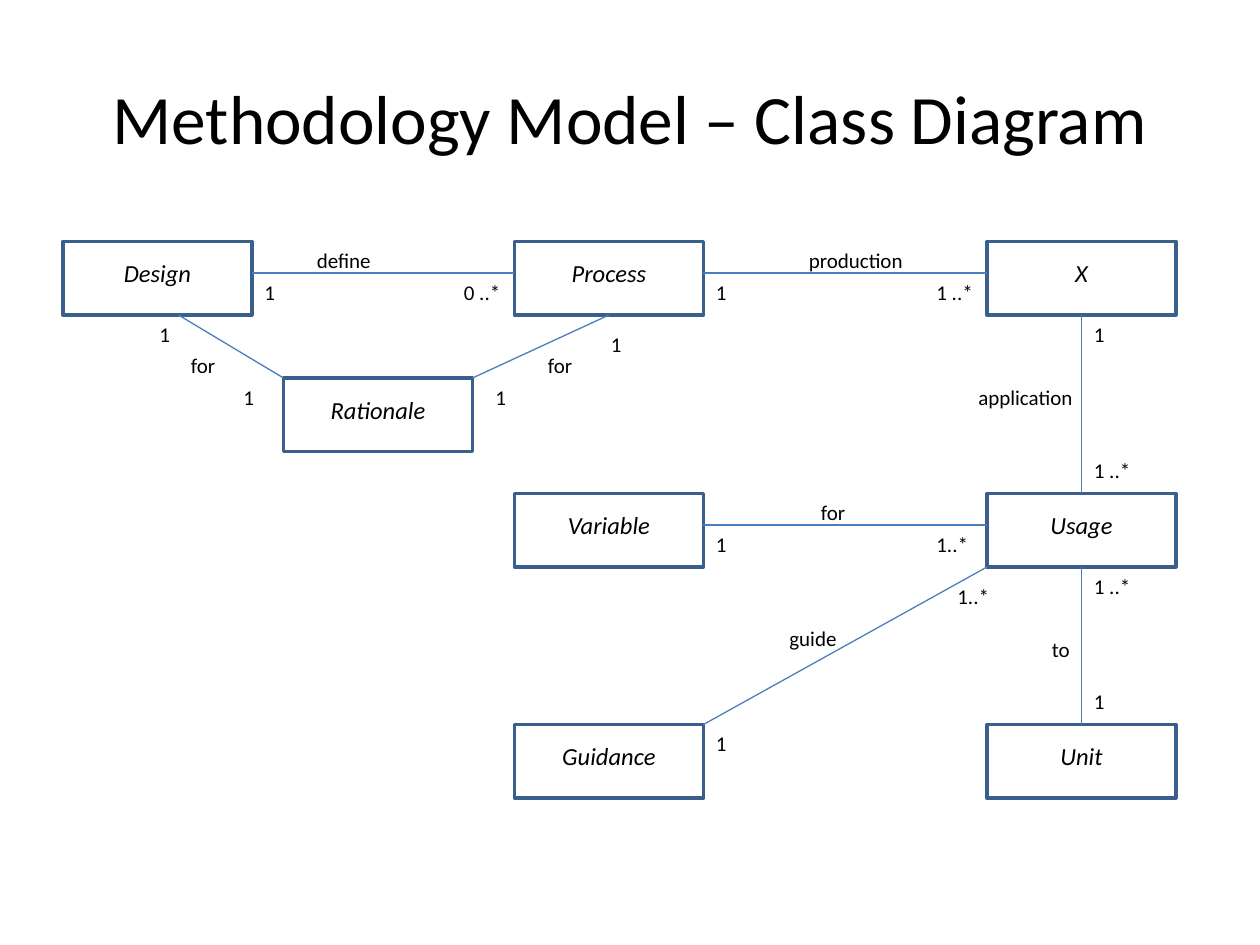
from dataclasses import dataclass

from lxml import etree
from pptx import Presentation
from pptx.dml.color import RGBColor
from pptx.enum.shapes import MSO_CONNECTOR, MSO_SHAPE
from pptx.enum.text import MSO_ANCHOR, PP_ALIGN
from pptx.oxml.ns import qn
from pptx.util import Pt

RECTANGLE = MSO_SHAPE.RECTANGLE
STRAIGHT = MSO_CONNECTOR.STRAIGHT
TOP, MIDDLE = MSO_ANCHOR.TOP, MSO_ANCHOR.MIDDLE
LEFT, CENTER = PP_ALIGN.LEFT, PP_ALIGN.CENTER


@dataclass(frozen=True)
class Theme:
    font: str = "Calibri"
    ink: RGBColor = RGBColor(0x00, 0x00, 0x00)
    border: RGBColor = RGBColor(0x3A, 0x5F, 0x8C)
    link: RGBColor = RGBColor(0x4B, 0x7E, 0xBC)
    title_size: float = 39.6
    class_size: float = 14
    label_size: float = 12
    border_width: float = 2
    link_width: float = 0.75


THEME = Theme()

# Class boxes: all one size, placed relative to the diagram
BOX_W, BOX_H = 108, 42
MID_X, MID_Y = BOX_W / 2, BOX_H / 2
LINK_Y = 18  # side links leave a box here
SITES = {(MID_X, 0): 0, (0, MID_Y): 1, (MID_X, BOX_H): 2, (BOX_W, MID_Y): 3}
COLUMNS = (0, 258, 528)
ROWS = (0, 144, 276)
CLASSES = {
    "Design": (COLUMNS[0], ROWS[0]),
    "Process": (COLUMNS[1], ROWS[0]),
    "X": (COLUMNS[2], ROWS[0]),
    "Rationale": (126, 78),
    "Variable": (COLUMNS[1], ROWS[1]),
    "Usage": (COLUMNS[2], ROWS[1]),
    "Guidance": (COLUMNS[1], ROWS[2]),
    "Unit": (COLUMNS[2], ROWS[2]),
}

# Associations: two ends (class, point on its box), then labels (text, x, y)
ASSOCIATIONS = [
    (("Process", (0, LINK_Y)), ("Design", (BOX_W, LINK_Y)),
     [("define", 138, 0), ("1", 108, 18), ("0 ..*", 222, 18)]),
    (("Process", (BOX_W, LINK_Y)), ("X", (0, LINK_Y)),
     [("production", 408, 0), ("1", 366, 18), ("1 ..*", 492, 18)]),
    (("Usage", (0, LINK_Y)), ("Variable", (BOX_W, LINK_Y)),
     [("for", 426, 144), ("1", 366, 162), ("1..*", 492, 162)]),
    (("Usage", (MID_X, 0)), ("X", (MID_X, BOX_H)),
     [("application", 516, 78), ("1", 582, 42), ("1 ..*", 582, 120)]),
    (("Unit", (MID_X, 0)), ("Usage", (MID_X, BOX_H)),
     [("to", 558, 222), ("1 ..*", 582, 186), ("1", 582, 252)]),
    (("Guidance", (BOX_W, 0)), ("Usage", (0, BOX_H)),
     [("guide", 408, 216), ("1", 366, 276), ("1..*", 504, 192)]),
    (("Rationale", (0, 0)), ("Design", (66, BOX_H)),
     [("for", 66, 60), ("1", 48, 42), ("1", 96, 78)]),
    (("Rationale", (BOX_W, 0)), ("Process", (MID_X, BOX_H)),
     [("for", 270, 60), ("1", 306, 48), ("1", 240, 78)]),
]
LABEL_W, LABEL_H = 36, 21.6
WIDE_LABELS = {"define": 48, "production": 90, "application": 72, "guide": 48}


def write(shape, text, size, align=LEFT, anchor=TOP, italic=False):
    frame = shape.text_frame
    frame.word_wrap = True
    frame.vertical_anchor = anchor
    paragraph = frame.paragraphs[0]
    paragraph.alignment = align
    run = paragraph.add_run()
    run.text = text
    run.font.name = THEME.font
    run.font.size = Pt(size)
    run.font.italic = italic
    run.font.color.rgb = THEME.ink


def add_text(slide, left, top, width, height, text, size, **style):
    box = slide.shapes.add_textbox(Pt(left), Pt(top), Pt(width), Pt(height))
    write(box, text, size, **style)


def add_class(slide, left, top, name):
    box = slide.shapes.add_shape(RECTANGLE, Pt(left), Pt(top), Pt(BOX_W), Pt(BOX_H))
    box.shadow.inherit = False
    box.fill.background()
    box.line.color.rgb = THEME.border
    box.line.width = Pt(THEME.border_width)
    box.text_frame.margin_top = Pt(9.6)
    write(box, name, THEME.class_size, align=CENTER, italic=True)
    return box


def add_association(slide, left, top, boxes, begin, end):
    corners = []
    for name, (dx, dy) in (begin, end):
        x, y = CLASSES[name]
        corners += [Pt(left + x + dx), Pt(top + y + dy)]
    link = slide.shapes.add_connector(STRAIGHT, *corners)
    link.line.color.rgb = THEME.link
    link.line.width = Pt(THEME.link_width)
    etree.SubElement(link._element.spPr, qn("a:effectLst"))
    for connect, (name, point) in ((link.begin_connect, begin), (link.end_connect, end)):
        if point in SITES:
            connect(boxes[name], SITES[point])


def add_diagram(slide, left, top):
    # Classes
    boxes = {name: add_class(slide, left + x, top + y, name)
             for name, (x, y) in CLASSES.items()}
    # Associations with their names and multiplicities
    for begin, end, labels in ASSOCIATIONS:
        add_association(slide, left, top, boxes, begin, end)
        for text, x, y in labels:
            add_text(slide, left + x, top + y, WIDE_LABELS.get(text, LABEL_W), LABEL_H,
                     text, THEME.label_size, align=CENTER if text == "production" else LEFT)


def add_title(slide, left, top, width, height):
    add_text(slide, left, top, width, height, "Methodology Model – Class Diagram",
             THEME.title_size, align=CENTER, anchor=MIDDLE)


def main():
    deck = Presentation()
    deck.slide_width, deck.slide_height = Pt(720), Pt(540)
    slide = deck.slides.add_slide(deck.slide_layouts[6])
    add_title(slide, 36, 21.6, 648, 90)
    add_diagram(slide, 36, 138)
    deck.save("out.pptx")


if __name__ == "__main__":
    main()
